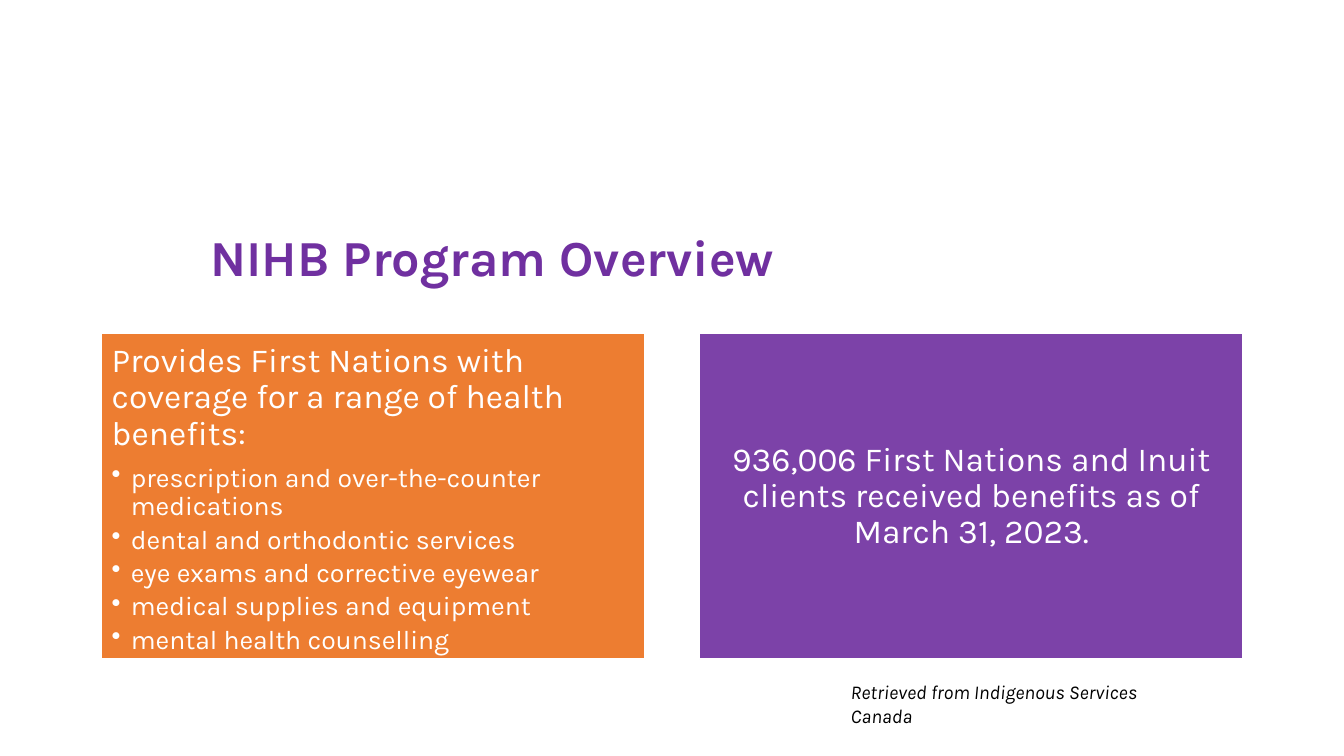
"""Build the NIHB Program Overview slide."""
from dataclasses import dataclass

from lxml.etree import SubElement
from pptx import Presentation
from pptx.dml.color import RGBColor
from pptx.enum.shapes import MSO_SHAPE
from pptx.enum.text import MSO_ANCHOR as ANCHOR, PP_ALIGN as ALIGN
from pptx.oxml.ns import qn
from pptx.slide import Slide
from pptx.text.text import TextFrame, _Paragraph as Paragraph
from pptx.util import Pt

PURPLE = RGBColor(0x70, 0x30, 0xA0)
ORANGE = RGBColor(0xED, 0x7D, 0x31)
WHITE = RGBColor(0xFF, 0xFF, 0xFF)
BLACK = RGBColor(0x00, 0x00, 0x00)
FONT = "Karla"
CARD_TOP, CARD_W, CARD_H = 238.32, 388.08, 232.56
INSET = 7.2
INDENT = 13.68


@dataclass(frozen=True)
class Label:
    """A line of plain text in its own box."""
    text: str
    left: float
    top: float
    width: float
    height: float
    size: float
    color: RGBColor
    bold: bool = False
    italic: bool = False
    spacing: float = 1.0


@dataclass(frozen=True)
class Card:
    """A coloured card with a lead sentence and optional bullets."""
    left: float
    fill: RGBColor
    opacity: int
    lead: str
    align: ALIGN
    anchor: ANCHOR
    bullets: tuple[str, ...] = ()


LABELS = (
    Label("NIHB Program Overview", 143.28, 162.72, 828, 62.64, 36, PURPLE,
          bold=True, spacing=0.9),
    Label("Retrieved from Indigenous Services Canada", 600.48, 482.4, 261.36, 24.48,
          14, BLACK, italic=True),
)
CARDS = (
    Card(72.72, ORANGE, 100,
         "Provides First Nations with coverage for a range of health benefits:",
         ALIGN.LEFT, ANCHOR.TOP,
         ("prescription and over-the-counter medications",
          "dental and orthodontic services",
          "eye exams and corrective eyewear",
          "medical supplies and equipment",
          "mental health counselling")),
    Card(499.68, PURPLE, 91,
         "936,006 First Nations and Inuit clients received benefits as of March 31, 2023.",
         ALIGN.CENTER, ANCHOR.MIDDLE),
)


def add_run(p: Paragraph, text: str, size: float, color: RGBColor,
            bold: bool = False, italic: bool = False) -> None:
    """Append one styled run."""
    r = p.add_run()
    r.text = text
    r.font.name = FONT
    r.font.size = Pt(size)
    r.font.color.rgb = color
    r.font.bold = bold
    r.font.italic = italic


def add_label(s: Slide, label: Label) -> None:
    """Draw a text box."""
    box = s.shapes.add_textbox(Pt(label.left), Pt(label.top),
                               Pt(label.width), Pt(label.height))
    tf = box.text_frame
    tf.word_wrap = True
    p = tf.paragraphs[0]
    p.line_spacing = label.spacing
    add_run(p, label.text, label.size, label.color, label.bold, label.italic)


def add_bullet(tf: TextFrame, text: str) -> None:
    """Append a bulleted paragraph."""
    p = tf.add_paragraph()
    p.level = 1
    p.alignment = ALIGN.LEFT
    p.line_spacing = 0.9
    p.space_after = Pt(3.3)
    pPr = p._p.get_or_add_pPr()
    pPr.set("marL", str(Pt(INDENT)))
    pPr.set("indent", str(-Pt(INDENT)))
    SubElement(pPr, qn("a:buChar")).set("char", "•")
    add_run(p, text, 19, WHITE)


def add_card(s: Slide, card: Card) -> None:
    """Draw a card with its text."""
    sp = s.shapes.add_shape(MSO_SHAPE.RECTANGLE, Pt(card.left), Pt(CARD_TOP),
                            Pt(CARD_W), Pt(CARD_H))
    sp.shadow.inherit = False
    sp.fill.solid()
    sp.fill.fore_color.rgb = card.fill
    if card.opacity < 100:
        color = sp._element.spPr.find(qn("a:solidFill")).find(qn("a:srgbClr"))
        SubElement(color, qn("a:alpha")).set("val", str(card.opacity * 1000))
    sp.line.color.rgb = WHITE
    sp.line.width = Pt(1)
    tf = sp.text_frame
    tf.word_wrap = True
    tf.vertical_anchor = card.anchor
    tf.margin_left = tf.margin_right = tf.margin_top = tf.margin_bottom = Pt(INSET)
    p = tf.paragraphs[0]
    p.alignment = card.align
    p.line_spacing = 0.9
    p.space_after = Pt(8.4)
    add_run(p, card.lead, 24, WHITE)
    for bullet in card.bullets:
        add_bullet(tf, bullet)


def main() -> None:
    """Create and save the presentation."""
    prs = Presentation()
    prs.slide_width, prs.slide_height = Pt(960), Pt(540)
    s = prs.slides.add_slide(prs.slide_layouts[6])
    title, source = LABELS
    add_label(s, title)
    for card in CARDS:
        add_card(s, card)
    add_label(s, source)
    prs.save("out.pptx")


if __name__ == "__main__":
    main()
